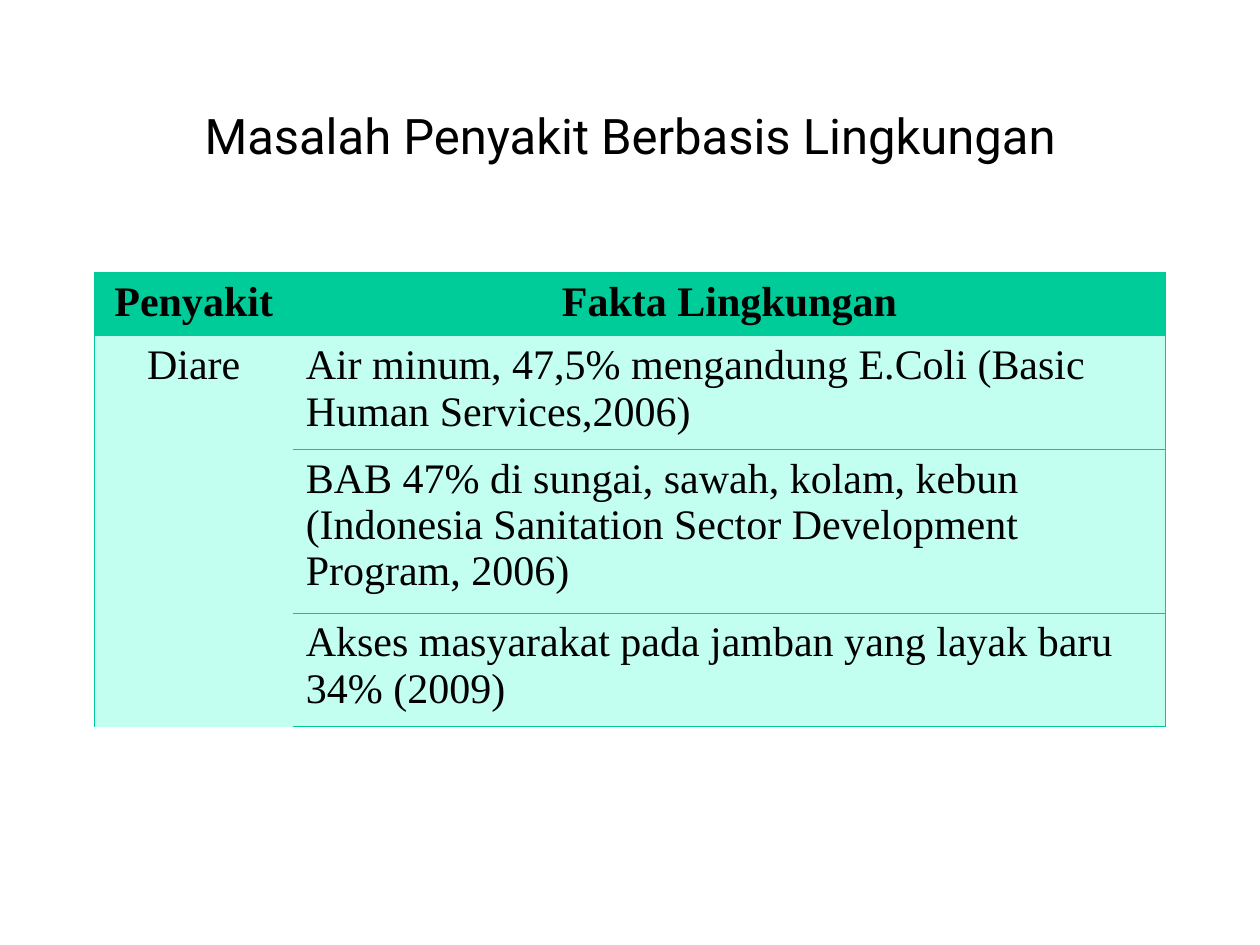
"""Build the slide on environment-based diseases and their facts."""
import lxml.etree
import pptx
import pptx.dml.color
import pptx.enum.text
import pptx.oxml.ns
import pptx.util

Cm, Pt = pptx.util.Cm, pptx.util.Pt
RGB = pptx.dml.color.RGBColor.from_string
ALIGN, ANCHOR = pptx.enum.text.PP_ALIGN, pptx.enum.text.MSO_ANCHOR

TITLE = "Masalah Penyakit Berbasis Lingkungan"
HEADINGS = ("Penyakit", "Fakta Lingkungan")
DISEASE = "Diare"
FACTS = [
    ("Air minum, 47,5% mengandung E.Coli (Basic Human Services,2006)", 2),
    ("BAB 47% di sungai, sawah, kolam, kebun "
     "(Indonesia Sanitation Sector Development Program, 2006)", 3),
    ("Akses masyarakat pada jamban yang layak baru 34% (2009)", 2),
]
THEME = {
    "title_font": "Roboto", "title_size": 28,
    "body_font": "Times New Roman", "body_size": 24,
    "ink": "000000", "header": "00CC99", "body": "C2FFF0",
    "frame": "00C896", "rule": "4FA58F",
    "frame_width": 0.75, "rule_width": 0.5,
}
LEFT, WIDTH = 1.9, 21.6
COLUMNS = (4.01, 17.59)
LINE_HEIGHT, CELL_PADDING = 0.94, 0.25


def style(paragraph, font, size, align, bold=False):
    paragraph.alignment = align
    for run in paragraph.runs:
        run.font.name, run.font.size, run.font.bold = font, Pt(size), bold
        run.font.color.rgb = RGB(THEME["ink"])


def set_borders(cell, edges):
    properties = cell._tc.get_or_add_tcPr()
    qn = pptx.oxml.ns.qn
    for position, (edge, kind) in enumerate(edges.items()):
        line = lxml.etree.Element(qn(f"a:ln{edge}"))
        properties.insert(position, line)
        if kind is None:
            lxml.etree.SubElement(line, qn("a:noFill"))
            continue
        line.set("w", str(Pt(THEME[f"{kind}_width"])))
        fill = lxml.etree.SubElement(line, qn("a:solidFill"))
        lxml.etree.SubElement(fill, qn("a:srgbClr"), val=THEME[kind])


def add_title(slide):
    heading = slide.shapes.add_textbox(Cm(LEFT), Cm(1.7), Cm(WIDTH), Cm(3.18))
    frame = heading.text_frame
    frame.word_wrap = True
    frame.vertical_anchor = ANCHOR.MIDDLE
    frame.margin_bottom = Cm(1.28)
    frame.text = TITLE
    style(frame.paragraphs[0], THEME["title_font"], THEME["title_size"], ALIGN.CENTER)


def add_facts(slide):
    rows = [(*HEADINGS, 1)]
    rows += [("" if i else DISEASE, fact, lines) for i, (fact, lines) in enumerate(FACTS)]
    heights = [LINE_HEIGHT * lines + CELL_PADDING for *_, lines in rows]
    table = slide.shapes.add_table(
        len(rows), len(COLUMNS), Cm(LEFT), Cm(5.5), Cm(WIDTH), Cm(sum(heights))).table
    table.horz_banding = False
    for column, width in zip(table.columns, COLUMNS):
        column.width = Cm(width)
    last = len(rows) - 1
    for r, (disease, fact, _) in enumerate(rows):
        table.rows[r].height = Cm(heights[r])
        for c, words in enumerate((disease, fact)):
            cell = table.cell(r, c)
            cell.text_frame.text = words
            align = ALIGN.CENTER if r == 0 or c == 0 else ALIGN.LEFT
            style(cell.text_frame.paragraphs[0], THEME["body_font"],
                  THEME["body_size"], align, bold=r == 0)
            cell.fill.solid()
            cell.fill.fore_color.rgb = RGB(THEME["body" if r else "header"])
            inner = "rule" if c else None
            set_borders(cell, {
                "L": None if c else "frame",
                "R": "frame" if c else None,
                "T": "frame" if r == 0 else inner if r > 1 else None,
                "B": "frame" if r == last else inner if r else None,
            })
    table.cell(1, 0).merge(table.cell(last, 0))


def main():
    deck = pptx.Presentation()
    deck.slide_width, deck.slide_height = Cm(25.4), Cm(19.05)
    slide = deck.slides.add_slide(deck.slide_layouts[6])
    add_title(slide)
    add_facts(slide)
    deck.save("out.pptx")


if __name__ == "__main__":
    main()
